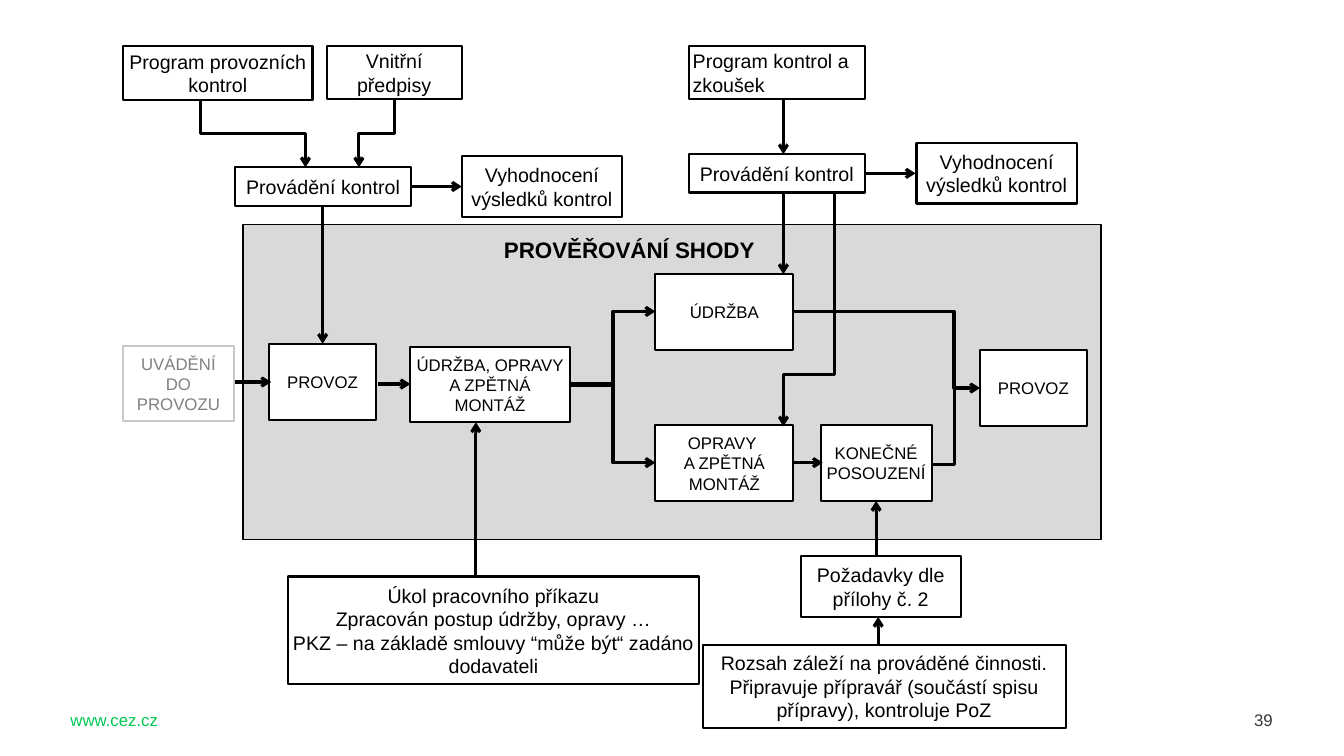
import pptx
import pptx.util
import pptx.dml.color
import pptx.enum.shapes
import pptx.enum.text
import pptx.oxml
import pptx.oxml.ns

THEME = {
    "font": "Arial", "black": "000000", "white": "FFFFFF", "panel": "D9D9D9",
    "muted_line": "C8C8C8", "muted_text": "808080", "green": "00C752", "gray": "363738",
    "small": 12, "body": 14, "heading": 16,
    "panel_line": 1, "box_line": 1.5, "arrow_line": 2.25,
}
PANEL = (2.41, 2.23, 8.51, 3.12)
LABELS = [
    ("PROVĚŘOVÁNÍ SHODY", (4.9, 2.29, 3.13, 0.35), "heading", "black", True),
    ("www.cez.cz", (0.6, 6.99, 1.81, 0.3), "small", "green", False),
    ("39", (12.34, 6.99, 0.47, 0.3), "small", "gray", False),
]
STEPS = [
    (["PROVOZ"], (2.67, 3.41, 1.06, 0.76)),
    (["ÚDRŽBA, OPRAVY A ZPĚTNÁ MONTÁŽ"], (4.07, 3.44, 1.58, 0.75)),
    (["ÚDRŽBA"], (6.5, 2.72, 1.37, 0.75)),
    (["OPRAVY \nA ZPĚTNÁ MONTÁŽ"], (6.5, 4.22, 1.37, 0.75)),
    (["KONEČNÉ POSOUZENÍ"], (8.14, 4.22, 1.1, 0.75)),
    (["PROVOZ"], (9.72, 3.47, 1.06, 0.76)),
]
PREVIOUS_STEP = (["UVÁDĚNÍ DO PROVOZU"], (1.22, 3.43, 1.1, 0.75))
INPUTS = [
    (["Úkol pracovního příkazu", "Zpracován postup údržby, opravy …",
      "PKZ – na základě smlouvy “může být“ zadáno dodavateli"], (2.86, 5.72, 4.07, 1.07)),
    (["Rozsah záleží na prováděné činnosti.",
      "Připravuje přípravář (součástí spisu přípravy), kontroluje PoZ"], (6.97, 6.4, 3.6, 0.82)),
    (["Program provozních kontrol"], (1.22, 0.46, 1.88, 0.53)),
    (["Vnitřní předpisy"], (3.24, 0.46, 1.34, 0.52)),
    (["Provádění kontrol"], (2.33, 1.66, 1.75, 0.38)),
    (["Vyhodnocení výsledků kontrol"], (4.58, 1.55, 1.59, 0.6)),
    (["Provádění kontrol"], (6.83, 1.53, 1.75, 0.38)),
    (["Vyhodnocení výsledků kontrol"], (9.09, 1.42, 1.59, 0.6)),
    (["Požadavky dle přílohy č. 2"], (7.94, 5.52, 1.59, 0.6)),
]
TEST_PROGRAM = (["Program kontrol a zkoušek"], (6.83, 0.46, 1.75, 0.52))
STRAIGHT = [
    (2.33, 3.79, 2.69, 3.79), (3.75, 3.81, 4.07, 3.81), (7.88, 4.59, 8.16, 4.59),
    (4.72, 5.72, 4.72, 4.19), (3.2, 2.04, 3.2, 3.41), (4.08, 1.85, 4.58, 1.85),
    (8.57, 1.72, 9.08, 1.72), (7.77, 1.91, 7.77, 2.72), (7.77, 0.99, 7.77, 1.53),
    (8.69, 5.52, 8.69, 4.97), (8.71, 6.4, 8.71, 6.12),
]
ACROSS_FIRST = [
    ((5.66, 3.81, 6.5, 3.09), 0.5), ((5.66, 3.82, 6.5, 4.59), 0.5),
    ((7.88, 3.09, 9.72, 3.85), 0.86),
]
DOWN_FIRST = [
    ((1.99, 0.99, 3.03, 1.66), 0.5, True), ((3.91, 0.99, 3.56, 1.66), 0.5, True),
    ((8.28, 1.91, 7.77, 4.23), 0.78, True), ((9.47, 3.85, 9.26, 4.59), 1.02, False),
]

Inches = pptx.util.Inches
CONNECTOR = pptx.enum.shapes.MSO_CONNECTOR
ALIGN = pptx.enum.text.PP_ALIGN


def color(name):
    return pptx.dml.color.RGBColor.from_string(THEME[name])


def apply(target, values):
    for name, value in values.items():
        setattr(target, name, value)


def write(tf, lines, size, ink, align, bold=False):
    tf.word_wrap = True
    for i, line in enumerate(lines):
        p = tf.paragraphs[0] if i == 0 else tf.add_paragraph()
        p.text = line
        p.alignment = align
        for r in p.runs:
            apply(r.font, {"name": THEME["font"], "size": pptx.util.Pt(THEME[size]), "bold": bold})
            r.font.color.rgb = color(ink)


def add_rect(s, at, fill, line, width):
    sp = s.shapes.add_shape(pptx.enum.shapes.MSO_SHAPE.RECTANGLE, *map(Inches, at))
    sp.shadow.inherit = False
    sp.fill.solid()
    sp.fill.fore_color.rgb = color(fill)
    sp.line.color.rgb = color(line)
    sp.line.width = pptx.util.Pt(THEME[width])
    return sp


def add_box(s, lines, at, size, ink="black", line="black", align=ALIGN.CENTER):
    tf = add_rect(s, at, "white", line, "box_line").text_frame
    apply(tf, {
        "margin_left": Inches(0.04), "margin_right": Inches(0.04),
        "margin_top": Inches(0.05), "margin_bottom": Inches(0.05),
        "vertical_anchor": pptx.enum.text.MSO_ANCHOR.MIDDLE,
    })
    write(tf, lines, size, ink, align)


def add_child(parent, tag, **attributes):
    child = pptx.oxml.ns.qn(tag)
    element = parent.makeelement(child, attributes)
    parent.append(element)
    return element


def add_line(s, ends, kind=CONNECTOR.STRAIGHT, bend=None, arrow=True):
    c = s.shapes.add_connector(kind, *map(Inches, ends))
    c.line.color.rgb = color("black")
    c.line.width = pptx.util.Pt(THEME["arrow_line"])
    properties = c.element.spPr
    if arrow:
        add_child(c.line._get_or_add_ln(), "a:tailEnd", type="arrow")
    add_child(properties, "a:effectLst")
    if bend is not None:
        geometry = properties.find(pptx.oxml.ns.qn("a:prstGeom"))
        guides = geometry.find(pptx.oxml.ns.qn("a:avLst"))
        add_child(guides, "a:gd", name="adj1", fmla=f"val {round(bend * 100000)}")
    return c


def add_down_first(s, ends, bend, arrow):
    x1, y1, x2, y2 = ends
    mid_x, mid_y = (x1 + x2) / 2, (y1 + y2) / 2
    turn = 1 if x2 < x1 else -1
    half_run, half_rise = turn * (y2 - y1) / 2, abs(x2 - x1) / 2
    turned = (mid_x - half_run, mid_y - half_rise, mid_x + half_run, mid_y + half_rise)
    c = add_line(s, turned, CONNECTOR.ELBOW, bend, arrow)
    xfrm = c.element.spPr.find(pptx.oxml.ns.qn("a:xfrm"))
    xfrm.set("rot", str(turn * 90 % 360 * 60000))


def main():
    prs = pptx.Presentation()
    apply(prs, {"slide_width": Inches(13.33), "slide_height": Inches(7.5)})
    s = prs.slides.add_slide(prs.slide_layouts[6])

    add_rect(s, PANEL, "panel", "black", "panel_line")
    for text, at, size, ink, bold in LABELS:
        tf = s.shapes.add_textbox(*map(Inches, at)).text_frame
        write(tf, [text], size, ink, ALIGN.LEFT, bold)

    add_box(s, *PREVIOUS_STEP, "small", "muted_text", "muted_line")
    for size, boxes in (("small", STEPS), ("body", INPUTS)):
        for lines, at in boxes:
            add_box(s, lines, at, size)
    add_box(s, *TEST_PROGRAM, "body", align=ALIGN.LEFT)

    for ends in STRAIGHT:
        add_line(s, ends)
    for ends, bend in ACROSS_FIRST:
        add_line(s, ends, CONNECTOR.ELBOW, bend)
    for ends, bend, arrow in DOWN_FIRST:
        add_down_first(s, ends, bend, arrow)

    prs.save("out.pptx")


if __name__ == "__main__":
    main()
